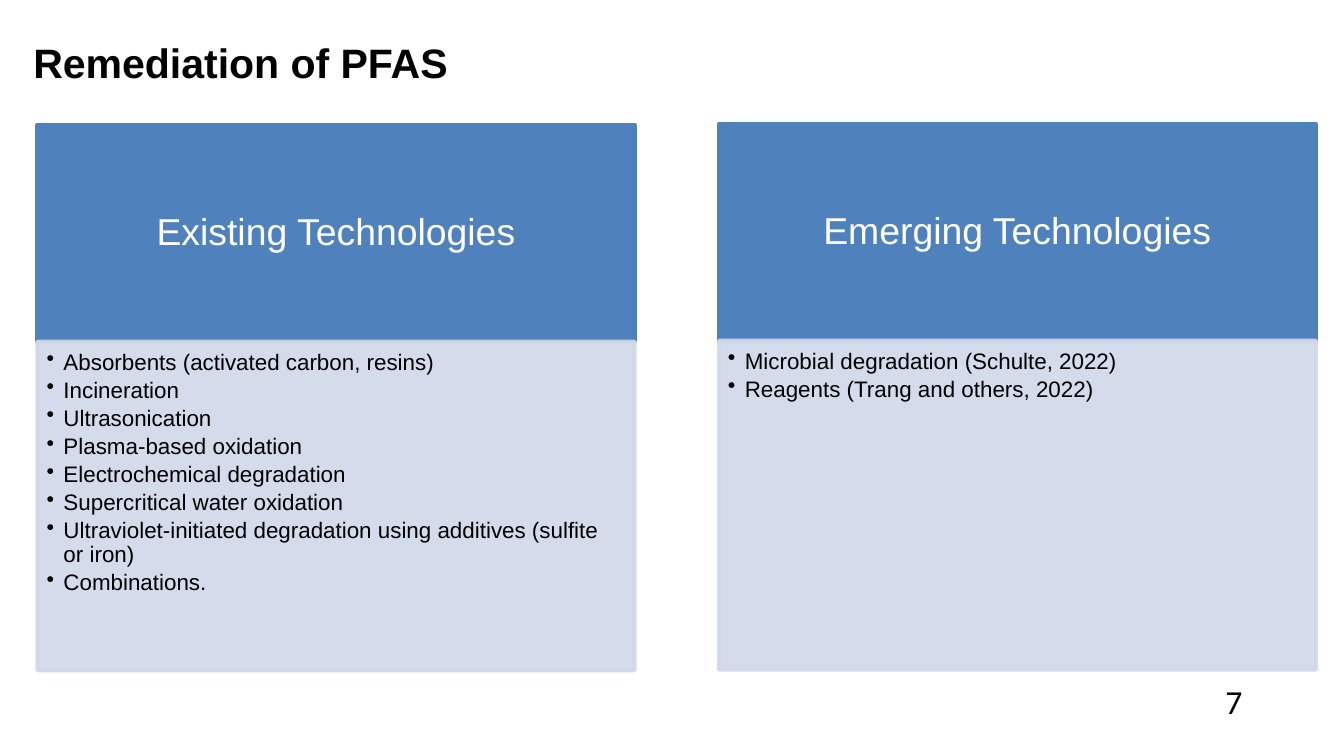
import pptx
import pptx.util
import pptx.dml.color
import pptx.enum.shapes
import pptx.enum.text
from lxml import etree

Pt = pptx.util.Pt
ANCHOR = pptx.enum.text.MSO_ANCHOR
COLORS = {"header": "4F81BD", "body": "D0D8E8", "light": "FFFFFF", "dark": "000000"}


def add_run(paragraph, text, size, color, font="Arial", bold=False):
    run = paragraph.add_run()
    run.text = text
    run.font.name = font
    run.font.size = Pt(size)
    run.font.bold = bold
    run.font.color.rgb = pptx.dml.color.RGBColor.from_string(COLORS[color])


def add_panel(left, top, height, color, margins, anchor):
    panel = slide.shapes.add_shape(
        pptx.enum.shapes.MSO_SHAPE.RECTANGLE, Pt(left), Pt(top), Pt(320), Pt(height))
    panel.shadow.inherit = False
    panel.line.width = Pt(2)
    for fill in (panel.fill, panel.line.fill):
        fill.solid()
        fill.fore_color.rgb = pptx.dml.color.RGBColor.from_string(COLORS[color])
    frame = panel.text_frame
    frame.word_wrap = True
    frame.vertical_anchor = anchor
    frame.margin_left, frame.margin_top, frame.margin_right, frame.margin_bottom = map(Pt, margins)
    return panel


deck = pptx.Presentation()
deck.slide_width, deck.slide_height = Pt(720), Pt(405)
slide = deck.slides.add_slide(deck.slide_layouts[6])

title = slide.shapes.add_textbox(Pt(10.8), Pt(15.7), Pt(694), Pt(40)).text_frame
title.word_wrap = True
title.margin_left, title.margin_top = Pt(7.2), Pt(4.3)
add_run(title.paragraphs[0], "Remediation of PFAS", 22, "dark", bold=True)

columns = [
    (20, 66.9, "Existing Technologies", [
        "Absorbents (activated carbon, resins)",
        "Incineration",
        "Ultrasonication",
        "Plasma-based oxidation",
        "Electrochemical degradation",
        "Supercritical water oxidation",
        "Ultraviolet-initiated degradation using additives (sulfite or iron)",
        "Combinations.",
    ]),
    (385, 66.4, "Emerging Technologies", [
        "Microbial degradation (Schulte, 2022)",
        "Reagents (Trang and others, 2022)",
    ]),
]

for left, top, heading, technologies in columns:
    header = add_panel(left, top, 116, "header", (11.5, 6.5, 11.5, 6.5), ANCHOR.MIDDLE)
    heading_line = header.text_frame.paragraphs[0]
    heading_line.alignment = pptx.enum.text.PP_ALIGN.CENTER
    heading_line.line_spacing = 0.9
    add_run(heading_line, heading, 20, "light")

    body = add_panel(left, top + 116, 176.4, "body", (5, 5, 6.5, 7.2), ANCHOR.TOP)
    for tint in body.element.spPr.iter(pptx.oxml.ns.qn("a:srgbClr")):
        etree.SubElement(tint, pptx.oxml.ns.qn("a:alpha"), val="90000")
    for index, technology in enumerate(technologies):
        frame = body.text_frame
        item = frame.add_paragraph() if index else frame.paragraphs[0]
        item.alignment = pptx.enum.text.PP_ALIGN.LEFT
        item.line_spacing = 0.9
        item.space_after = Pt(2.1)
        properties = item._p.get_or_add_pPr()
        properties.set("marL", str(Pt(9)))
        properties.set("indent", str(-Pt(9)))
        etree.SubElement(properties, pptx.oxml.ns.qn("a:buChar"), char="•")
        add_run(item, technology, 12, "dark")

page_number = slide.shapes.add_textbox(Pt(649.4), Pt(361.4), Pt(54.7), Pt(29)).text_frame
page_number.word_wrap = True
add_run(page_number.paragraphs[0], "7", 18, "dark", font="Calibri")

deck.save("out.pptx")
